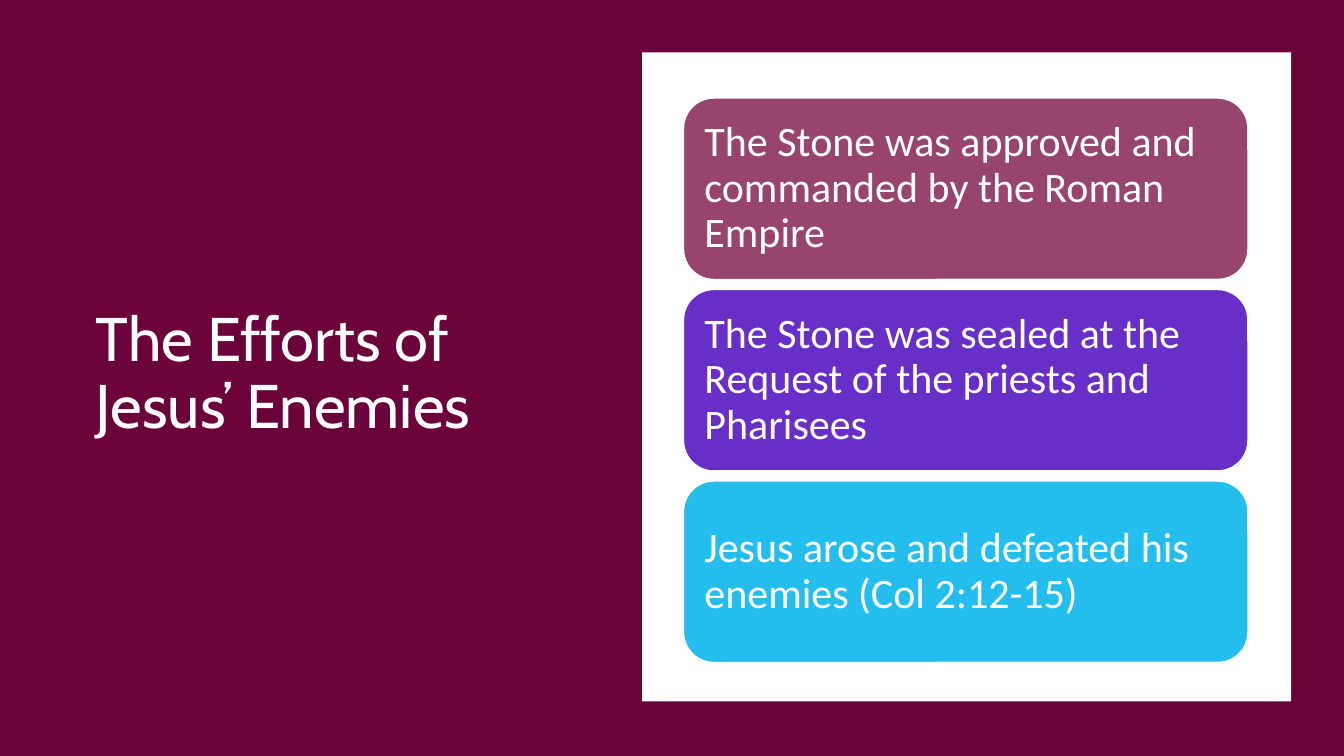
from lxml import etree
from pptx import Presentation
from pptx import util as u
from pptx.dml.color import RGBColor
from pptx.enum import shapes, text
from pptx.oxml import ns

HUES = {
    "white": "FFFFFF",
    "wine": "420023",
    "plum": "6E003B",
    "rose": "97446E",
    "violet": "672FC7",
    "sky": "24BEEE",
}
CARDS = [
    ("The Stone was approved and commanded by the Roman Empire", "rose"),
    ("The Stone was sealed at the Request of the priests and Pharisees", "violet"),
    ("Jesus arose and defeated his enemies (Col 2:12-15)", "sky"),
]
RECT = shapes.MSO_SHAPE.RECTANGLE
ROUND = shapes.MSO_SHAPE.ROUNDED_RECTANGLE


class Deck:
    def __init__(self):
        self.prs = Presentation()
        self.prs.slide_width = u.Inches(13.33)
        self.prs.slide_height = u.Inches(7.5)
        self.slide = self.prs.slides.add_slide(self.prs.slide_layouts[5])

    def hue(self, name):
        return RGBColor.from_string(HUES[name])

    def place(self, x, y, w, h):
        wide, high = self.prs.slide_width, self.prs.slide_height
        return [int(part * side / 100) for part, side in
                ((x, wide), (y, high), (w, wide), (h, high))]

    def box(self, kind, area, fill, alpha=100):
        shape = self.slide.shapes.add_shape(kind, *self.place(*area))
        shape.shadow.inherit = False
        shape.fill.solid()
        shape.fill.fore_color.rgb = self.hue(fill)
        shape.line.fill.background()
        if alpha < 100:
            tint = shape.element.spPr.find(".//" + ns.qn("a:srgbClr"))
            etree.SubElement(tint, ns.qn("a:alpha"), val=str(alpha * 1000))
        return shape

    def label(self, shape, words, font, size, inset):
        frame = shape.text_frame
        frame.word_wrap = True
        frame.auto_size = text.MSO_AUTO_SIZE.NONE
        frame.vertical_anchor = text.MSO_ANCHOR.MIDDLE
        frame.margin_left = frame.margin_right = u.Inches(inset)
        frame.margin_top = frame.margin_bottom = u.Inches(inset)
        para = frame.paragraphs[0]
        para.alignment = text.PP_ALIGN.LEFT
        para.line_spacing = 0.9
        run = para.add_run()
        run.text = words
        run.font.name = font
        run.font.size = u.Pt(size)
        run.font.color.rgb = self.hue("white")

    def title(self, words, area):
        shape = self.slide.shapes.title
        shape.left, shape.top, shape.width, shape.height = self.place(*area)
        self.label(shape, words, "Cabin", 44, 0.1)
        self.slide.shapes.element.append(shape.element)

    def card(self, words, fill, area):
        shape = self.box(ROUND, area, fill)
        shape.line.color.rgb = self.hue("white")
        shape.line.width = u.Pt(1)
        self.label(shape, words, "Calibri", 30, 0.12)


def main():
    deck = Deck()
    for fill, alpha in (("white", 100), ("wine", 90), ("plum", 90)):
        deck.box(RECT, (0, 0, 100, 100), fill, alpha)
    deck.title("The Efforts of Jesus’ Enemies", (6.38, 7.2, 32.4, 84.8))
    deck.box(RECT, (47.78, 6.93, 48.3, 85.87), "white")
    for row, (words, fill) in enumerate(CARDS):
        deck.card(words, fill, (50.86, 12.97 + row * 25.33, 42, 24))
    deck.prs.save("out.pptx")


if __name__ == "__main__":
    main()
